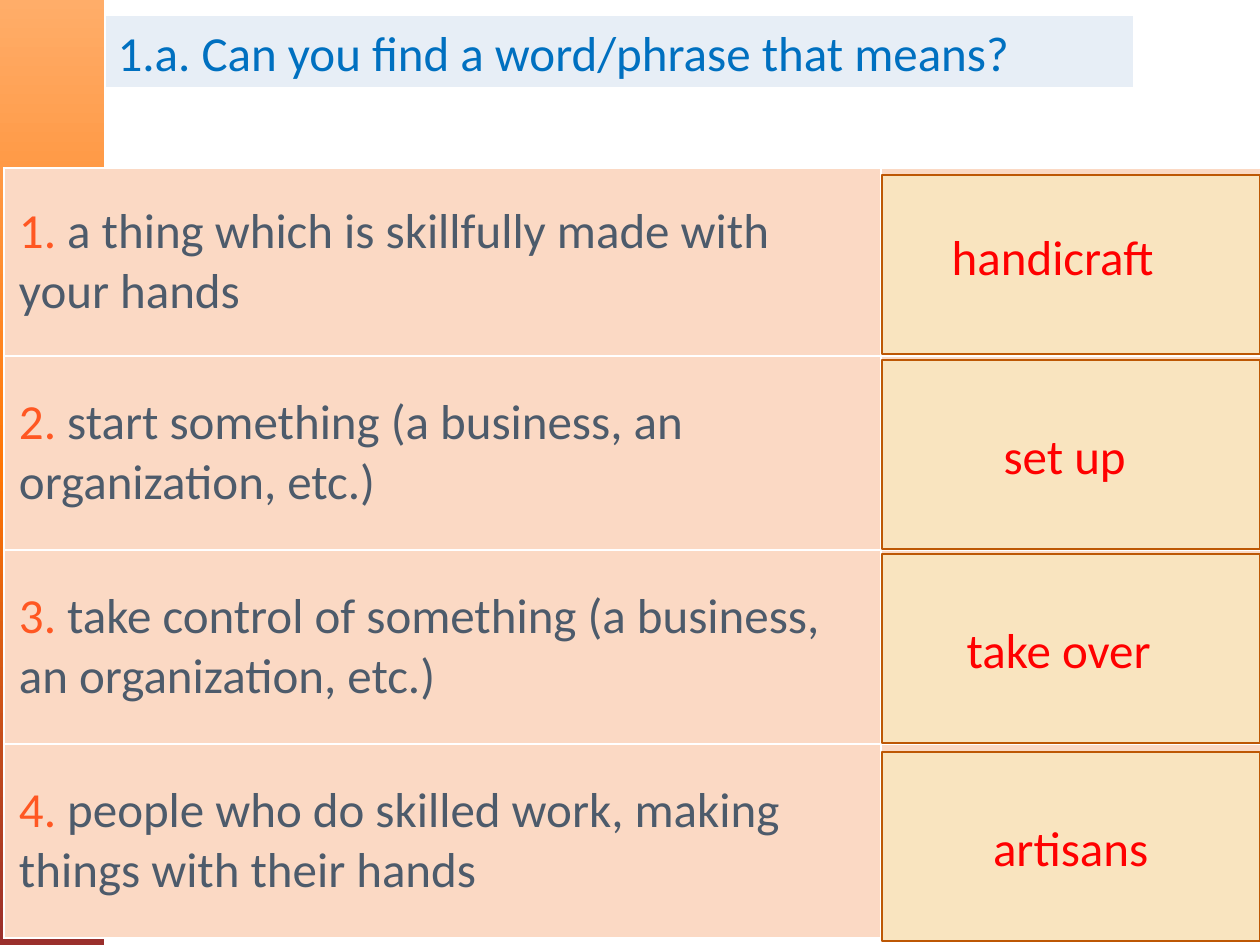
from copy import deepcopy

from lxml.etree import SubElement
from pptx import Presentation
from pptx.dml.color import RGBColor
from pptx.enum.shapes import MSO_SHAPE as Shape
from pptx.enum.text import MSO_ANCHOR as Anchor, PP_ALIGN as Align
from pptx.oxml.ns import qn
from pptx.util import Pt

EMU_PER_PX = 914400 / 126
FONT, SIZE = "Calibri", 28
COLORS = {
    "white": "FFFFFF", "title": "0070C0", "title_fill": "E7EEF6",
    "number": "FF5722", "clue": "4D5B6B", "clue_fill": "FBD9C4",
    "answer": "FF0000", "answer_fill": "F9E4BF", "answer_line": "BD5704",
}
BAR_STOPS = ["FFAD69", "FF7605", "9A2F2C"]
CLUES = [
    "a thing which is skillfully made with your hands",
    "start something (a business, an organization, etc.)",
    "take control of something (a business, an organization, etc.)",
    "people who do skilled work, making things with their hands",
]
# Word, top, height, extra right inset, extra bottom inset
ANSWERS = [
    ("handicraft", 175, 179, 36, 18),
    ("set up", 360, 189, 12, 0),
    ("take over", 554, 189, 24, 0),
    ("artisans", 752, 189, 0, 0),
]


def px(length):
    return round(length * EMU_PER_PX)


def rgb(name):
    return RGBColor.from_string(COLORS[name])


def style_font(font, color):
    font.name, font.size, font.bold = FONT, Pt(SIZE), False
    font.color.rgb = rgb(color)


def paint(shape, fill, line):
    shape.fill.solid()
    shape.fill.fore_color.rgb = rgb(fill)
    shape.line.color.rgb = rgb(line)
    shape.line.width = Pt(1.25)


def add_side_bar(page, box):
    bar = page.shapes.add_shape(Shape.RECTANGLE, *map(px, box))
    bar.shadow.inherit = False
    bar.line.fill.background()
    bar.fill.gradient()
    bar.fill.gradient_angle = 270
    # A gradient starts with two stops; a third is copied in
    stop_list = bar.element.spPr.find(".//" + qn("a:gsLst"))
    stop_list.append(deepcopy(stop_list[-1]))
    for index, (stop, color) in enumerate(zip(bar.fill.gradient_stops, BAR_STOPS)):
        stop.position = index / (len(BAR_STOPS) - 1)
        stop.color.rgb = RGBColor.from_string(color)


def fill_title(page, box, text):
    title = page.shapes.title
    title.left, title.top, title.width, title.height = map(px, box)
    # Rounded outline for the placeholder
    outline = SubElement(title.element.spPr, qn("a:prstGeom"), prst="roundRect")
    SubElement(outline, qn("a:avLst"))
    paint(title, "title_fill", "white")
    frame = title.text_frame
    frame.text = text
    frame.vertical_anchor = Anchor.MIDDLE
    para = frame.paragraphs[0]
    para.alignment = Align.LEFT
    style_font(para.font, "title")


def add_cell_borders(cell):
    properties = cell._tc.get_or_add_tcPr()
    for index, side in enumerate(("lnL", "lnR", "lnT", "lnB")):
        border = properties.makeelement(qn("a:" + side), {"w": str(Pt(1.5))})
        fill = SubElement(border, qn("a:solidFill"))
        SubElement(fill, qn("a:srgbClr"), val=COLORS["white"])
        properties.insert(index, border)


def add_clue_table(page, box, column_widths, row_heights):
    table = page.shapes.add_table(
        len(CLUES), len(column_widths), *map(px, box)).table
    table.first_row = table.horz_banding = False
    for column, width in zip(table.columns, column_widths):
        column.width = px(width)
    for row, height in zip(table.rows, row_heights):
        row.height = px(height)
    for cell in table.iter_cells():
        cell.fill.solid()
        cell.fill.fore_color.rgb = rgb("clue_fill")
        add_cell_borders(cell)
    for index, clue in enumerate(CLUES):
        cell = table.cell(index, 0)
        cell.vertical_anchor = Anchor.MIDDLE
        cell.margin_left = cell.margin_right = px(15)
        cell.margin_top = cell.margin_bottom = px(5)
        para = cell.text_frame.paragraphs[0]
        for text, color in ((f"{index + 1}. ", "number"), (clue, "clue")):
            span = para.add_run()
            span.text = text
            style_font(span.font, color)


def add_answer(page, box, word, extra_right, extra_bottom):
    card = page.shapes.add_shape(Shape.RECTANGLE, *map(px, box))
    card.shadow.inherit = False
    paint(card, "answer_fill", "answer_line")
    frame = card.text_frame
    frame.text = word
    frame.word_wrap = True
    frame.vertical_anchor = Anchor.MIDDLE
    frame.margin_right = px(13 + extra_right)
    frame.margin_bottom = px(6 + extra_bottom)
    para = frame.paragraphs[0]
    para.alignment = Align.CENTER
    style_font(para.font, "answer")


def main():
    deck = Presentation()
    deck.slide_width, deck.slide_height = px(1260), px(945)
    page = deck.slides.add_slide(deck.slide_layouts[5])
    add_side_bar(page, (0, 0, 104, 945))
    fill_title(page, (105, 15, 1029, 73), "1.a. Can you find a word/phrase that means?")
    add_clue_table(page, (4, 168, 1257, 770), (877, 380), (188, 194, 194, 194))
    for word, top, height, extra_right, extra_bottom in ANSWERS:
        add_answer(page, (882, top, 378, height), word, extra_right, extra_bottom)
    deck.save("out.pptx")


if __name__ == "__main__":
    main()
